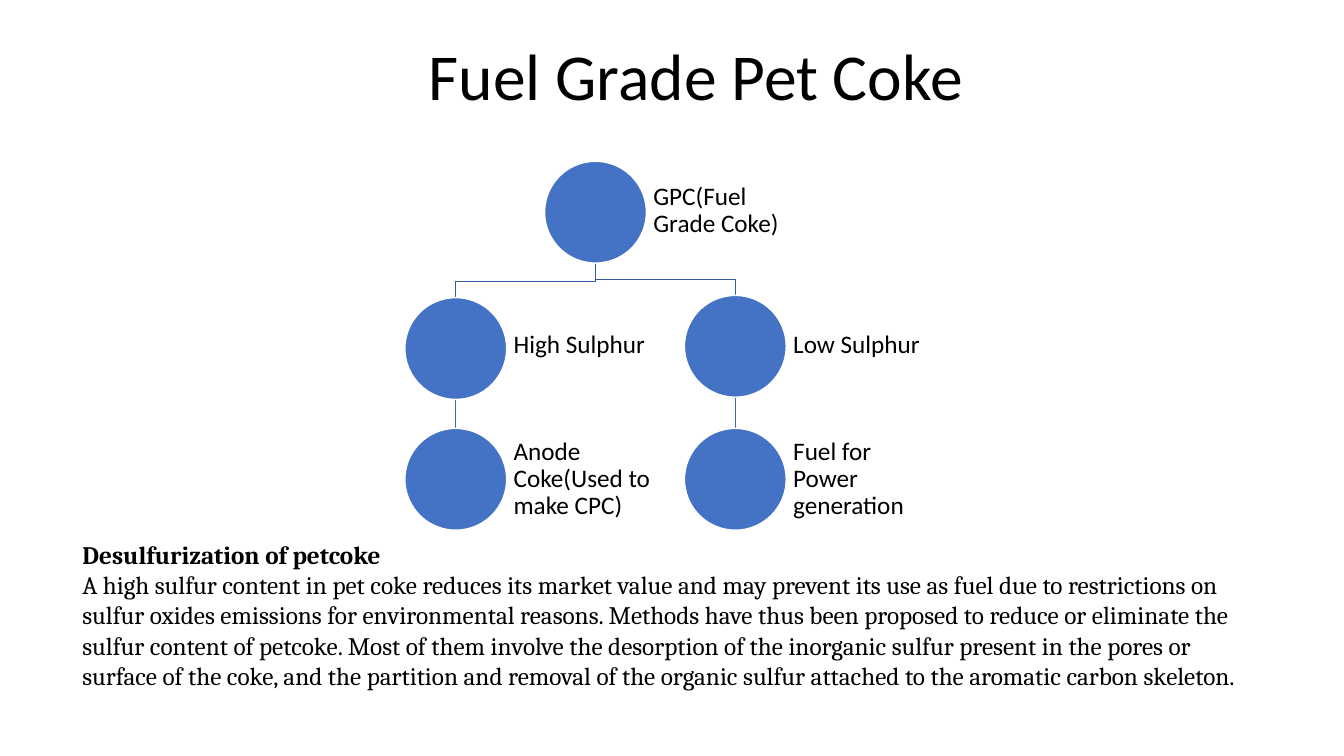
from dataclasses import dataclass

from lxml.etree import SubElement
from pptx import Presentation
from pptx.dml.color import RGBColor
from pptx.enum.shapes import MSO_CONNECTOR, MSO_SHAPE
from pptx.enum.text import MSO_ANCHOR, PP_ALIGN
from pptx.oxml.ns import qn
from pptx.slide import Slide
from pptx.text.text import TextFrame
from pptx.util import Pt

COLORS = {
    "disc": "4472C4",
    "edge": "FFFFFF",
    "elbow": "365B9D",
    "stem": "3E67B2",
    "text": "000000",
}
SIZE = 72.7  # disc diameter
DROP = 11.5  # height of an elbow's last leg


@dataclass
class Node:
    text: str
    left: float
    top: float
    row: int

    @property
    def mid(self) -> float:
        return self.left + SIZE / 2

    @property
    def base(self) -> float:
        return self.top + SIZE


@dataclass
class Link:
    start: Node
    end: Node


def color(name: str) -> RGBColor:
    return RGBColor.from_string(COLORS[name])


def add_box(slide: Slide, left: float, top: float, width: float, height: float) -> TextFrame:
    frame = slide.shapes.add_textbox(Pt(left), Pt(top), Pt(width), Pt(height)).text_frame
    frame.word_wrap = True
    return frame


def set_font(para, size: float, face: str = "Calibri", bold: bool = False) -> None:
    para.font.size = Pt(size)
    para.font.name = face
    para.font.bold = bold
    para.font.color.rgb = color("text")


def draw_link(slide: Slide, link: Link) -> None:
    start, end = link.start, link.end
    if start.mid == end.mid:
        line = slide.shapes.add_connector(
            MSO_CONNECTOR.STRAIGHT, Pt(start.mid), Pt(start.base), Pt(end.mid), Pt(end.top))
        SubElement(line.element.spPr, qn("a:effectLst"))
        line.line.color.rgb = color("stem")
    else:
        turn = end.top - DROP
        pen = slide.shapes.build_freeform(Pt(start.mid), Pt(start.base))
        spots = [(start.mid, turn), (end.mid, turn), (end.mid, end.top)]
        pen.add_line_segments([(Pt(x), Pt(y)) for x, y in spots], close=False)
        line = pen.convert_to_shape()
        line.fill.background()
        line.shadow.inherit = False
        line.line.color.rgb = color("elbow")
    line.line.width = Pt(1)


def draw_node(slide: Slide, node: Node) -> None:
    disc = slide.shapes.add_shape(
        MSO_SHAPE.OVAL, Pt(node.left), Pt(node.top), Pt(SIZE), Pt(SIZE))
    disc.shadow.inherit = False
    disc.fill.solid()
    disc.fill.fore_color.rgb = color("disc")
    disc.line.color.rgb = color("edge")
    disc.line.width = Pt(1)

    frame = add_box(slide, node.left + SIZE, 114.5 + 95.75 * node.row, 109.4, SIZE)
    frame.vertical_anchor = MSO_ANCHOR.MIDDLE
    frame.margin_left = frame.margin_right = Pt(5)
    frame.margin_top = frame.margin_bottom = Pt(5)
    para = frame.paragraphs[0]
    para.text = node.text
    para.line_spacing = 0.9
    set_font(para, 18)


def main() -> None:
    deck = Presentation()
    deck.slide_width, deck.slide_height = Pt(960), Pt(540)
    slide = deck.slides.add_slide(deck.slide_layouts[6])

    # Tree of coke grades
    root = Node("GPC(Fuel Grade Coke)", 389, 115.2, 0)
    high = Node("High Sulphur", 289.2, 212.6, 1)
    anode = Node("Anode Coke(Used to make CPC)", 289.2, 306, 2)
    low = Node("Low Sulphur", 488.9, 211, 1)
    fuel = Node("Fuel for Power generation", 488.9, 306, 2)
    for link in (Link(low, fuel), Link(root, low), Link(high, anode), Link(root, high)):
        draw_link(slide, link)
    for node in (root, high, anode, low, fuel):
        draw_node(slide, node)

    # Body text
    body = add_box(slide, 51.8, 381.6, 856.8, 116.6)
    head = body.paragraphs[0]
    head.text = "Desulfurization of petcoke"
    set_font(head, 18, "Cambria", True)
    para = body.add_paragraph()
    para.text = (
        "A high sulfur content in pet coke reduces its market value and may prevent its use "
        "as fuel due to restrictions on sulfur oxides emissions for environmental reasons. "
        "Methods have thus been proposed to reduce or eliminate the sulfur content of petcoke. "
        "Most of them involve the desorption of the inorganic sulfur present in the pores or "
        "surface of the coke, and the partition and removal of the organic sulfur attached to "
        "the aromatic carbon skeleton.")
    set_font(para, 18, "Cambria")

    # Title
    title = add_box(slide, 64, 32.4, 866, 55.4).paragraphs[0]
    title.text = "Fuel Grade Pet Coke"
    title.alignment = PP_ALIGN.CENTER
    title.line_spacing = 0.8
    set_font(title, 46.8)

    deck.save("out.pptx")


if __name__ == "__main__":
    main()
